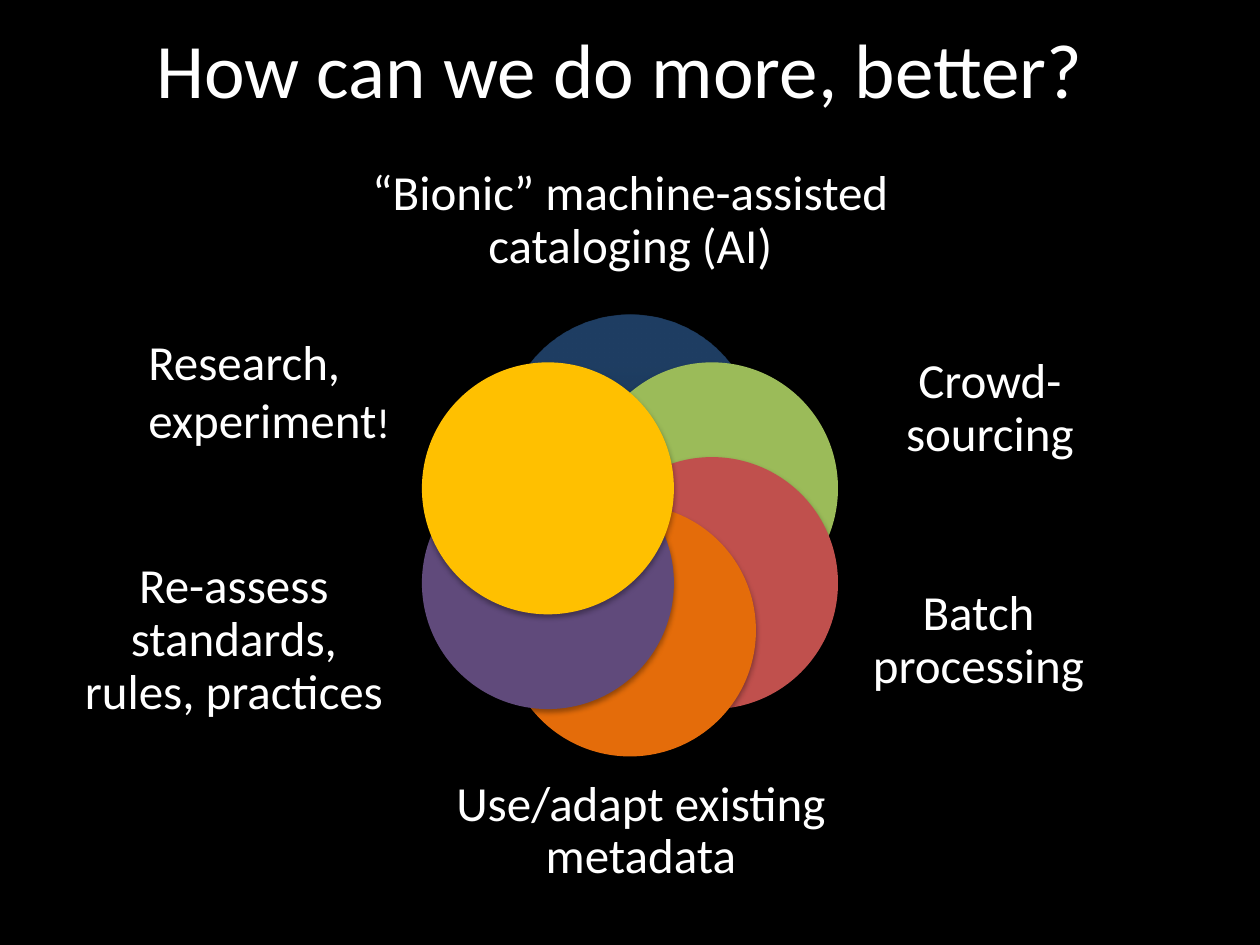
from math import cos, radians, sin

from lxml import etree
from pptx import Presentation
from pptx.dml.color import RGBColor
from pptx.enum.shapes import MSO_SHAPE
from pptx.enum.text import MSO_ANCHOR, MSO_AUTO_SIZE, PP_ALIGN
from pptx.oxml.ns import qn
from pptx.util import Cm, Pt

OVAL = MSO_SHAPE.OVAL
MIDDLE, TOP = MSO_ANCHOR.MIDDLE, MSO_ANCHOR.TOP
CENTER, LEFT = PP_ALIGN.CENTER, PP_ALIGN.LEFT
GROW = MSO_AUTO_SIZE.SHAPE_TO_FIT_TEXT

COLORS = {
    "back": "000000", "text": "FFFFFF", "navy": "2F5F99", "blue": "3D7CC7",
    "green": "9BBB59", "red": "C0504D", "orange": "E46C0A",
    "purple": "604A7B", "gold": "FFC000",
}
HUB = (12.7, 10.8)
RING = 1.91
DISC = 5.08

# Clockwise from the top: disc colour, caption, caption box in cm
PETALS = [
    ("blue", "“Bionic” machine-assisted cataloging (AI)", (7.42, 2.74, 10.57, 3.45)),
    ("green", "Crowd-sourcing", (16.94, 6.35, 6.03, 3.81)),
    ("red", "Batch processing", (16.71, 10.8, 6.03, 4.24)),
    ("orange", "Use/adapt existing metadata", (7.19, 15.04, 11.46, 3.45)),
    ("purple", "Re-assess standards, rules, practices", (1.7, 10.8, 6.03, 4.24)),
    ("gold", None, None),
]


def color(name):
    return RGBColor.from_string(COLORS[name])


def apply(target, values):
    for name, value in values.items():
        setattr(target, name, value)


def fade(node, percent):
    """Set the opacity of every RGB colour below an XML node."""
    for rgb in node.iter(qn("a:srgbClr")):
        alpha = etree.SubElement(rgb, qn("a:alpha"))
        alpha.set("val", str(percent * 1000))


class Deck:
    font = "Calibri"

    def __init__(self):
        self.prs = Presentation()
        apply(self.prs, {"slide_width": Cm(25.4), "slide_height": Cm(19.05)})
        self.slide = self.prs.slides.add_slide(self.prs.slide_layouts[6])
        fill = self.slide.background.fill
        fill.solid()
        fill.fore_color.rgb = color("back")

    def text(self, box, lines, align=CENTER, space=1.0, **frame):
        """Add a text box; each line is a list of (text, size) runs."""
        shape = self.slide.shapes.add_textbox(*map(Cm, box))
        body = shape.text_frame
        apply(body, {"word_wrap": True, "vertical_anchor": MIDDLE, **frame})
        for i, line in enumerate(lines):
            para = body.add_paragraph() if i else body.paragraphs[0]
            apply(para, {"alignment": align, "line_spacing": space})
            for words, size in line:
                run = para.add_run()
                run.text = words
                apply(run.font, {"name": self.font, "size": Pt(size)})
                run.font.color.rgb = color("text")

    def caption(self, box, words):
        sides = ("left", "right", "top", "bottom")
        self.text(box, [[(words, 28)]], space=0.9,
                  **{f"margin_{side}": 0 for side in sides})

    def disc(self, x, y, name):
        """Add a circle centred on x, y."""
        shape = self.slide.shapes.add_shape(
            OVAL, Cm(x - DISC / 2), Cm(y - DISC / 2), Cm(DISC), Cm(DISC))
        shape.line.fill.background()
        if name == "blue":
            self.blend(shape)
        else:
            shape.fill.solid()
            shape.fill.fore_color.rgb = color(name)
        self.shade(shape)

    def blend(self, shape):
        """Fill with a half-clear gradient from navy to blue."""
        fill = shape.fill
        fill.gradient()
        fill.gradient_angle = 90
        for stop, name, place in zip(fill.gradient_stops, ("navy", "blue"), (0, 0.8)):
            stop.color.rgb = color(name)
            stop.position = place
        fade(shape.element.spPr, 50)

    def shade(self, shape):
        """Cast a soft shadow straight down."""
        shape.shadow.inherit = False
        effects = shape.element.spPr.find(qn("a:effectLst"))
        cast = etree.SubElement(effects, qn("a:outerShdw"))
        values = {"blurRad": Pt(3.1), "dist": Pt(1.8), "dir": 5400000, "rotWithShape": 0}
        for name, value in values.items():
            cast.set(name, str(value))
        etree.SubElement(cast, qn("a:srgbClr")).set("val", COLORS["back"])
        fade(cast, 35)


def main():
    deck = Deck()
    deck.text((1.06, 0, 22.86, 2.75), [[("How can we do more, better?", 44)]])
    for i, (name, words, box) in enumerate(PETALS):
        turn = radians(i * 360 / len(PETALS))
        deck.disc(HUB[0] + RING * sin(turn), HUB[1] - RING * cos(turn), name)
        if words:
            deck.caption(box, words)
    deck.text((2.74, 6.55, 5.44, 2.64),
              [[("Research,", 28)], [("experiment", 28), ("!", 24)]],
              align=LEFT, word_wrap=False, vertical_anchor=TOP, auto_size=GROW)
    deck.prs.save("out.pptx")


if __name__ == "__main__":
    main()
